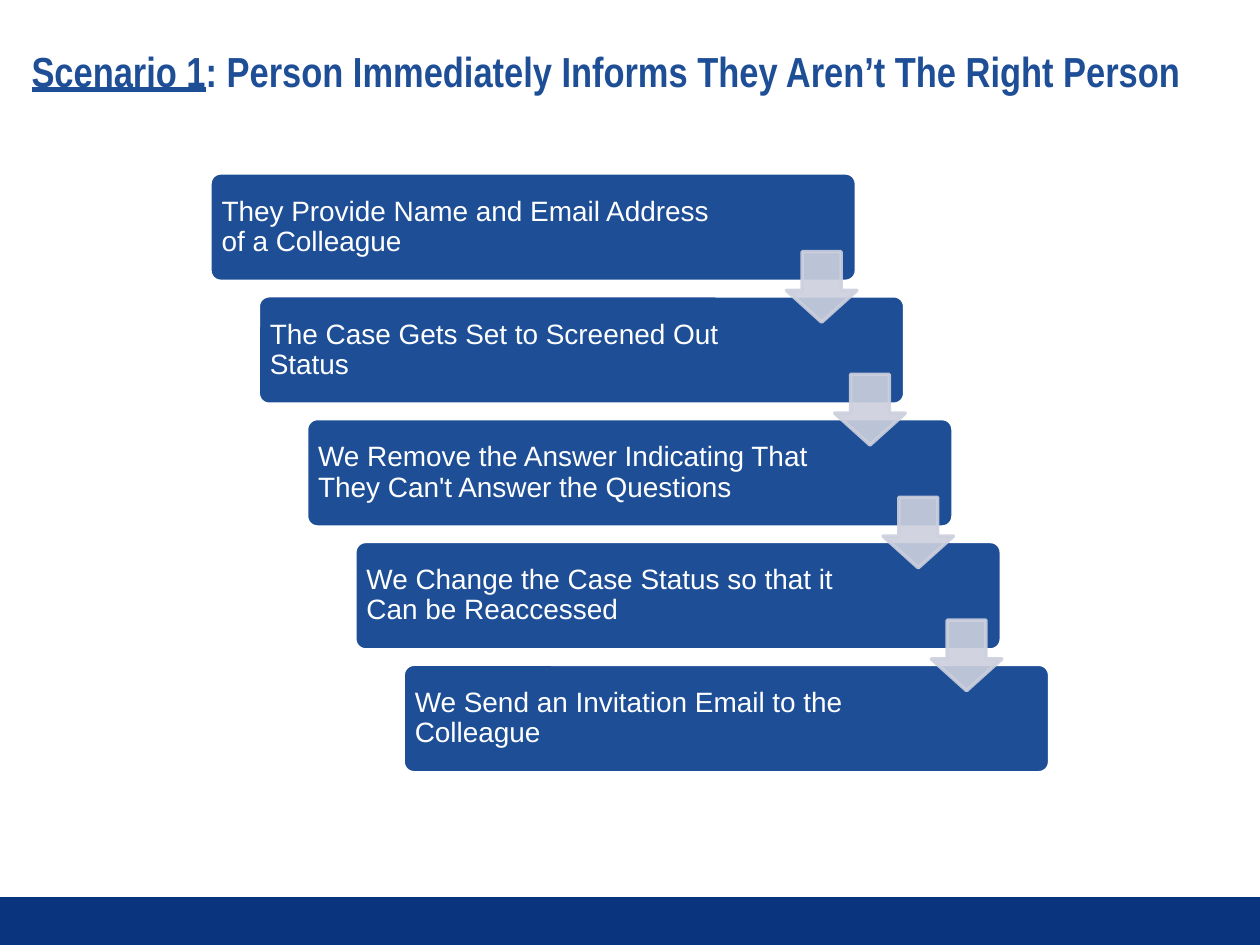
from dataclasses import dataclass

from lxml import etree
from pptx import Presentation
from pptx import util as u
from pptx.dml import color
from pptx.enum import shapes, text
from pptx.oxml import ns

COLORS = {"bar": "0A357E", "blue": "1E4E96", "white": "FFFFFF", "arrow": "CDD0DD"}
STEP_X, STEP_Y = 27.6, 70.2
CARD_W, CARD_H = 369.4, 62
ARROW = 40.3


@dataclass
class Box:
    x: float
    y: float
    w: float
    h: float

    def shifted(self, n: int) -> "Box":
        return Box(self.x + n * STEP_X, self.y + n * STEP_Y, self.w, self.h)

    def emu(self) -> tuple:
        return tuple(u.Pt(v) for v in (self.x, self.y, self.w, self.h))


CARD = Box(120, 98.8, CARD_W, CARD_H)
LABEL = Box(121.8, 100.7, 298, 58.3)
FIRST_ARROW = Box(449.4, 143.8, ARROW, ARROW)
STEPS = [
    "They Provide Name and Email Address of a Colleague",
    "The Case Gets Set to Screened Out Status",
    "We Remove the Answer Indicating That They Can't Answer the Questions",
    "We Change the Case Status so that it Can be Reaccessed",
    "We Send an Invitation Email to the Colleague",
]


def rgb(name: str) -> color.RGBColor:
    return color.RGBColor.from_string(COLORS[name])


def add_shape(parent, kind, box: Box, fill: str, line: str = "", adj=(), alpha: int = 100):
    sp = parent.add_shape(kind, *box.emu())
    sp.shadow.inherit = False
    for i, value in enumerate(adj):
        sp.adjustments[i] = value
    sp.fill.solid()
    sp.fill.fore_color.rgb = rgb(fill)
    if line:
        sp.line.color.rgb = rgb(line)
        sp.line.width = u.Pt(2)
    else:
        sp.line.fill.background()
    if alpha < 100:
        for clr in sp.element.spPr.iter(ns.qn("a:srgbClr")):
            etree.SubElement(clr, ns.qn("a:alpha"), val=str(alpha * 1000))
    return sp


def format_frame(tf, insets: tuple) -> None:
    tf.auto_size = text.MSO_AUTO_SIZE.NONE
    tf.word_wrap = True
    tf.vertical_anchor = text.MSO_ANCHOR.MIDDLE
    tf.margin_left, tf.margin_top, tf.margin_right, tf.margin_bottom = map(u.Pt, insets)
    p = tf.paragraphs[0]
    p.alignment = text.PP_ALIGN.LEFT
    p.line_spacing = 0.9


def add_run(p, words: str, *, font="Arial", size=16, fill="white", bold=False, underline=False):
    r = p.add_run()
    r.text = words
    r.font.name = font
    r.font.size = u.Pt(size)
    r.font.color.rgb = rgb(fill)
    r.font.bold = bold
    r.font.underline = underline
    return r


def add_title(s) -> None:
    sp = s.shapes.title
    sp.left, sp.top, sp.width, sp.height = Box(10.8, 12.2, 696.2, 59.8).emu()
    format_frame(sp.text_frame, (7.2, 7.2, 14.4, 7.2))
    p = sp.text_frame.paragraphs[0]
    style = dict(font="Arial Narrow", size=24, fill="blue", bold=True)
    add_run(p, "Scenario 1", underline=True, **style)
    add_run(p, ": Person Immediately Informs They Aren’t The Right Person", **style)


def add_step(parent, n: int, words: str) -> None:
    add_shape(parent, shapes.MSO_SHAPE.ROUNDED_RECTANGLE, CARD.shifted(n),
              "blue", "white", adj=(0.1,))
    tf = parent.add_textbox(*LABEL.shifted(n).emu()).text_frame
    format_frame(tf, (4.8,) * 4)
    add_run(tf.paragraphs[0], words)


def main() -> None:
    prs = Presentation()
    prs.slide_width, prs.slide_height = u.Pt(720), u.Pt(540)
    s = prs.slides.add_slide(prs.slide_layouts[5])
    add_shape(s.shapes, shapes.MSO_SHAPE.RECTANGLE, Box(0, 512.6, 720, 27.4), "bar")
    add_title(s)
    flow = s.shapes.add_group_shape().shapes
    for n, words in enumerate(STEPS):
        add_step(flow, n, words)
    for n in range(len(STEPS) - 1):
        add_shape(flow, shapes.MSO_SHAPE.DOWN_ARROW, FIRST_ARROW.shifted(n),
                  "arrow", "arrow", adj=(0.55, 0.45), alpha=90)
    prs.save("out.pptx")


if __name__ == "__main__":
    main()
